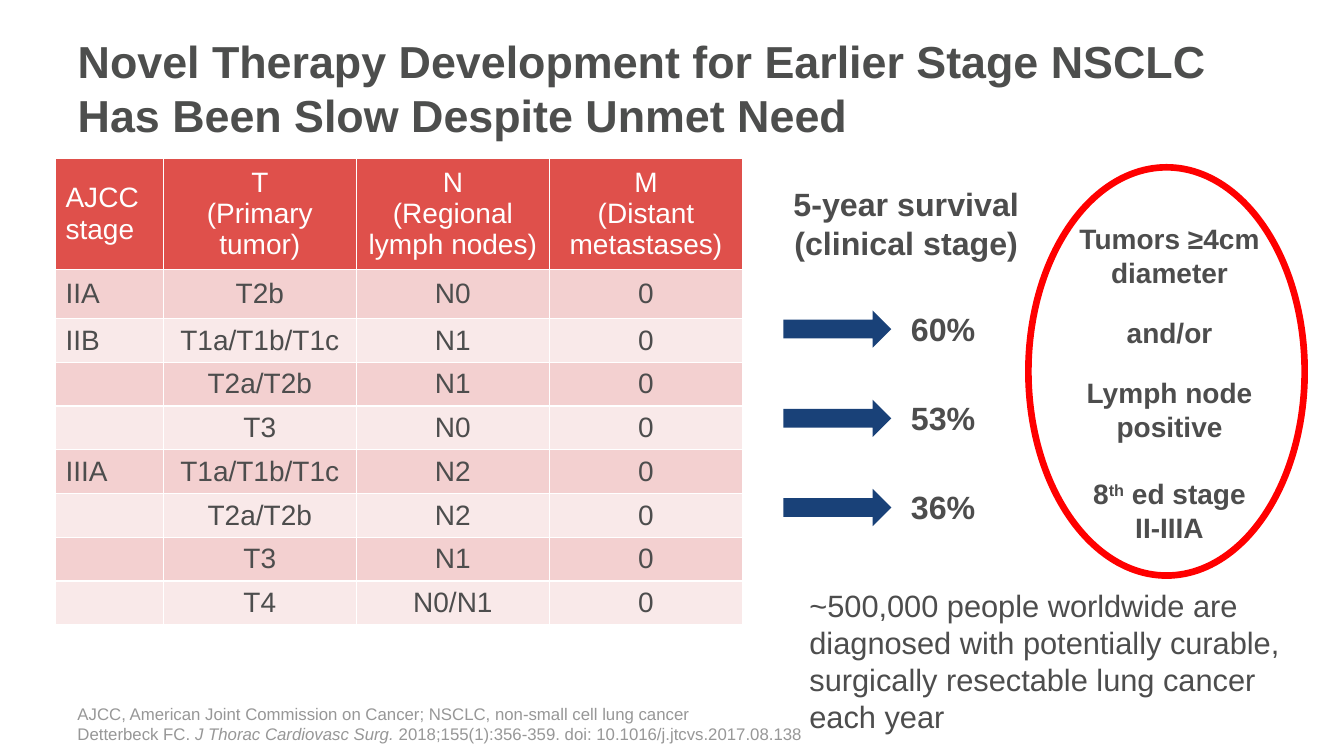
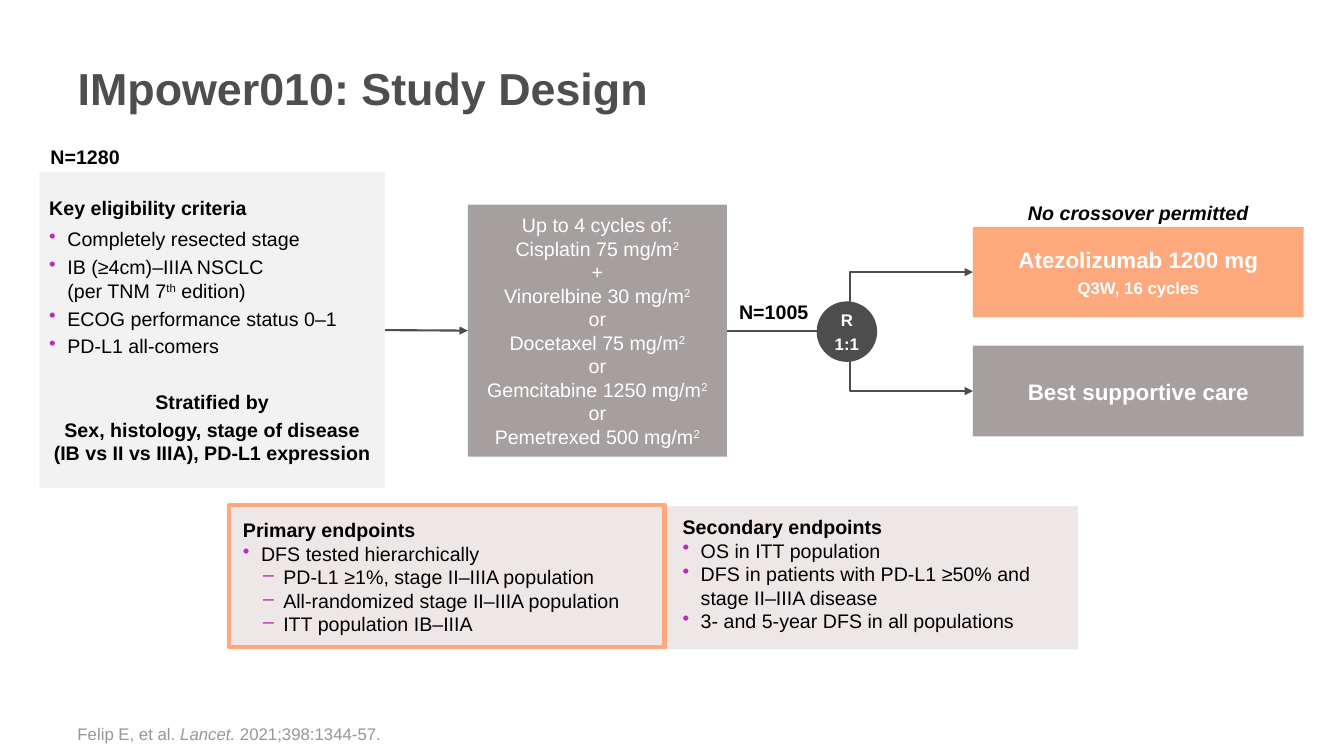
from copy import deepcopy

from lxml.etree import SubElement
from pptx import Presentation
from pptx.dml.color import RGBColor
from pptx.enum.shapes import MSO_CONNECTOR as Link, MSO_SHAPE as Preset
from pptx.enum.text import MSO_ANCHOR as Anchor, PP_ALIGN as Align
from pptx.oxml.ns import qn
from pptx.util import Inches, Pt

TEXT, TITLE, FOOTER = "4D4D4D", "4D4E4D", "979797"
WHITE, BLACK, GREY, ORANGE = "FFFFFF", "000000", "A69F9F", "FDA97D"
PANEL, ENDPOINTS, MAGENTA = "F2F2F2", "EEE7E7", "BE2BBB"
HEADER, BANDS = "DF504B", ("F3D0D0", "F9E9E9")
ARROW, RING = "194178", "FF0000"
FONT = "Arial"
BULLET = {"bullet": "•", "margin": 0.18, "indent": -0.18, "bold": False}
DASH = {"bullet": "–", "margin": 0.4, "indent": -0.2, "bold": False}


def paint(fill, color):
    fill.solid()
    fill.fore_color.rgb = RGBColor.from_string(color)


def place(page, at, paras=(), preset=None, fill=None, line=None, inset=(0.1, 0.05), anchor=None, wrap=True, **base):
    lengths = [Inches(value) for value in at]
    if preset is None:
        box = page.shapes.add_textbox(*lengths)
    else:
        box = page.shapes.add_shape(preset, *lengths)
        box.shadow.inherit = False
        if fill:
            paint(box.fill, fill)
        else:
            box.fill.background()
        if line:
            paint(box.line.fill, line[0])
            box.line.width = Pt(line[1])
        else:
            box.line.fill.background()
    frame = box.text_frame
    side, edge = (Inches(value) for value in inset)
    settings = {"word_wrap": wrap, "vertical_anchor": anchor or (Anchor.MIDDLE if preset else Anchor.TOP),
                "margin_left": side, "margin_right": side, "margin_top": edge, "margin_bottom": edge}
    for name, value in settings.items():
        setattr(frame, name, value)
    for number, (text, extra) in enumerate(paras):
        style = {"size": 14, "color": TEXT, "align": Align.LEFT, "before": 0, "after": 0,
                 "accent": "super", **base, **extra}
        para = frame.add_paragraph() if number else frame.paragraphs[0]
        if "bullet" in style:
            props = para._p.get_or_add_pPr()
            props.set("marL", str(Inches(style["margin"])))
            props.set("indent", str(Inches(style["indent"])))
            tint = SubElement(props, qn("a:buClr"))
            SubElement(tint, qn("a:srgbClr"), val=MAGENTA)
            SubElement(props, qn("a:buChar"), char=style["bullet"])
        spacing = {"alignment": style["align"], "space_before": Pt(style["before"] if number else 0),
                   "space_after": Pt(style["after"])}
        for name, value in spacing.items():
            setattr(para, name, value)
        for index, piece in enumerate(text.split("^")):
            for row, words in enumerate(piece.split("\n")):
                if row:
                    para.add_line_break()
                    para._p[-1].append(deepcopy(span._r.rPr))
                span = para.add_run()
                span.text = words
                look = {"name": FONT, "size": Pt(style["size"]), "bold": style.get("bold", False),
                        "italic": style.get("italic", False)}
                if index % 2 and style["accent"] == "italic":
                    look["italic"] = True
                for name, value in look.items():
                    setattr(span.font, name, value)
                paint(span.font.fill, style["color"])
                if index % 2 and style["accent"] == "super":
                    span._r.rPr.set("baseline", "30000")
    return box


deck = Presentation()
deck.slide_width, deck.slide_height = Inches(13.33), Inches(7.5)

headings = [
    ("Novel Therapy Development for Earlier Stage NSCLC Has Been Slow Despite Unmet Need",
     ["AJCC, American Joint Commission on Cancer; NSCLC, non-small cell lung cancer",
      "Detterbeck FC. ^J Thorac Cardiovasc Surg. ^2018;155(1):356-359. doi: 10.1016/j.jtcvs.2017.08.138"]),
    ("IMpower010: Study Design", ["Felip E, et al. ^Lancet. ^2021;398:1344-57."]),
]
pages = []
for heading, sources in headings:
    page = deck.slides.add_slide(deck.slide_layouts[5])
    title = page.shapes.title
    for name, value in {"left": 0.67, "top": 0.22, "width": 11.75, "height": 1.3}.items():
        setattr(title, name, Inches(value))
    title.text_frame.text = heading
    title.text_frame.vertical_anchor = Anchor.MIDDLE
    para = title.text_frame.paragraphs[0]
    para.alignment = Align.LEFT
    for name, value in {"name": FONT, "size": Pt(32), "bold": True}.items():
        setattr(para.runs[0].font, name, value)
    paint(para.runs[0].font.fill, TITLE)
    place(page, (0.67, 6.95, 11.75, 0.48), [(source, {}) for source in sources],
          anchor=Anchor.BOTTOM, size=12, color=FOOTER, accent="italic")
    pages.append(page)
staging, design = pages

rows = [
    ("AJCC stage", "T\n(Primary tumor)", "N\n(Regional lymph nodes)", "M\n(Distant metastases)"),
    ("IIA", "T2b", "N0", "0"),
    ("IIB", "T1a/T1b/T1c", "N1", "0"),
    ("", "T2a/T2b", "N1", "0"),
    ("", "T3", "N0", "0"),
    ("IIIA", "T1a/T1b/T1c", "N2", "0"),
    ("", "T2a/T2b", "N2", "0"),
    ("", "T3", "N1", "0"),
    ("", "T4", "N0/N1", "0"),
]
table = staging.shapes.add_table(len(rows), 4, Inches(0.55), Inches(1.57), Inches(6.82), Inches(4.39)).table
for column, width in zip(table.columns, [1.07] + [1.915] * 3):
    column.width = Inches(width)
for row, height in zip(table.rows, [1.03, 0.49] + [0.41] * 7):
    row.height = Inches(height)
for r, values in enumerate(rows):
    for c, value in enumerate(values):
        cell = table.cell(r, c)
        paint(cell.fill, BANDS[(r - 1) % 2] if r else HEADER)
        cell.vertical_anchor = Anchor.MIDDLE
        cell.text = value
        for para in cell.text_frame.paragraphs:
            para.alignment = Align.CENTER if c else Align.LEFT
            for span in para.runs:
                for name, setting in {"name": FONT, "size": Pt(20), "bold": False}.items():
                    setattr(span.font, name, setting)
                paint(span.font.fill, TEXT if r else WHITE)

emphasis = {"bold": True, "align": Align.CENTER}
place(staging, (7.77, 1.78, 2.44, 0.88), [("5-year survival", {}), ("(clinical stage)", {})], size=23, **emphasis)
for number, rate in enumerate(["60%", "53%", "36%"]):
    top = 3.08 + 0.885 * number
    place(staging, (7.77, top, 1.07, 0.37), preset=Preset.RIGHT_ARROW, fill=ARROW)
    place(staging, (8.87, top - 0.06, 0.97, 0.49), [(rate, {})], size=23, **emphasis)
place(staging, (7.93, 5.77, 4.87, 1.58),
      [("~500,000 people worldwide are diagnosed with potentially curable, "
        "surgically resectable lung cancer each year", {})], size=22)
place(staging, (10.58, 2.15, 2.04, 3.33),
      [("Tumors ≥4cm diameter", {}), ("and/or", {"before": 19}), ("Lymph node positive", {"before": 19}),
       ("8^th^ ed stage", {"before": 24}), ("II-IIIA", {})], size=20, **emphasis)
place(staging, (10.2, 1.66, 2.74, 4.05), preset=Preset.OVAL, line=(RING, 4.75))

supportive = place(design, (9.65, 3.43, 3.28, 0.9), [("Best supportive care", {})],
                   Preset.RECTANGLE, GREY, size=16, color=WHITE, **emphasis)
treatment = place(design, (9.65, 2.25, 3.28, 0.9),
                  [("Atezolizumab 1200 mg", {"size": 16}), ("Q3W, 16 cycles", {"size": 12, "before": 3})],
                  Preset.RECTANGLE, ORANGE, inset=(0.04, 0.04), color=WHITE, **emphasis)
criterion = {**BULLET, "before": 3}
eligibility = place(design, (0.39, 1.71, 3.43, 3.13), [
    ("Key eligibility criteria", {"bold": True, "after": 3}),
    ("Completely resected stage", criterion),
    ("IB (≥4cm)–IIIA NSCLC\n(per TNM 7^th^ edition)", criterion),
    ("ECOG performance status 0–1", criterion),
    ("PD-L1 all-comers", criterion),
    ("Stratified by", {**emphasis, "before": 23}),
    ("Sex, histology, stage of disease (IB vs II vs IIIA), PD-L1 expression", {**emphasis, "before": 3}),
], Preset.RECTANGLE, PANEL, inset=(0.1, 0.1), color=BLACK)
regimens = ["Up to 4 cycles of:", "Cisplatin 75 mg/m^2^", "+", "Vinorelbine 30 mg/m^2^", "or",
            "Docetaxel 75 mg/m^2^", "or", "Gemcitabine 1250 mg/m^2^", "or", "Pemetrexed 500 mg/m^2^"]
chemotherapy = place(design, (4.64, 2.03, 2.57, 2.5), [(regimen, {}) for regimen in regimens],
                     Preset.RECTANGLE, GREY, color=WHITE, align=Align.CENTER)

for kind, source, target in [(Link.STRAIGHT, eligibility, chemotherapy),
                             (Link.ELBOW, chemotherapy, treatment),
                             (Link.ELBOW, chemotherapy, supportive)]:
    link = design.shapes.add_connector(kind, 0, 0, 0, 0)
    link.begin_connect(source, 3)
    link.end_connect(target, 1)
    paint(link.line.fill, TEXT)
    link.line.width = Pt(1.5)
    SubElement(link.line._get_or_add_ln(), qn("a:tailEnd"), type="triangle")
    SubElement(link._element.spPr, qn("a:effectLst"))

place(design, (8.1, 2.99, 0.6, 0.6), [("R", {}), ("1:1", {"before": 3})],
      Preset.OVAL, TEXT, wrap=False, size=12, color=WHITE, **emphasis)

place(design, (2.28, 5.02, 8.41, 1.42), preset=Preset.RECTANGLE, fill=ENDPOINTS)
place(design, (2.41, 5.14, 4.03, 1.18), [
    ("Primary endpoints", {"bold": True}),
    ("DFS tested hierarchically", BULLET),
    ("PD-L1 ≥1%, stage II–IIIA population", DASH),
    ("All-randomized stage II–IIIA population", DASH),
    ("ITT population IB–IIIA", DASH),
], inset=(0, 0), color=BLACK)
place(design, (6.77, 5.11, 3.52, 1.18), [
    ("Secondary endpoints", {"bold": True}),
    ("OS in ITT population", BULLET),
    ("DFS in patients with PD-L1 ≥50% and stage II–IIIA disease", BULLET),
    ("3- and 5-year DFS in all populations", BULLET),
], inset=(0, 0), color=BLACK)
place(design, (2.27, 5.01, 4.32, 1.41), preset=Preset.RECTANGLE, line=(ORANGE, 3))

label = {"color": BLACK, "bold": True}
place(design, (0.5, 1.44, 1.22, 0.24), [("N=1280", {})], inset=(0, 0), **label)
place(design, (7.16, 2.93, 1.03, 0.34), [("N=1005", {})], align=Align.CENTER, **label)
place(design, (9.65, 1.94, 3.28, 0.34), [("No crossover permitted", {})], align=Align.CENTER, italic=True, **label)

deck.save("out.pptx")
